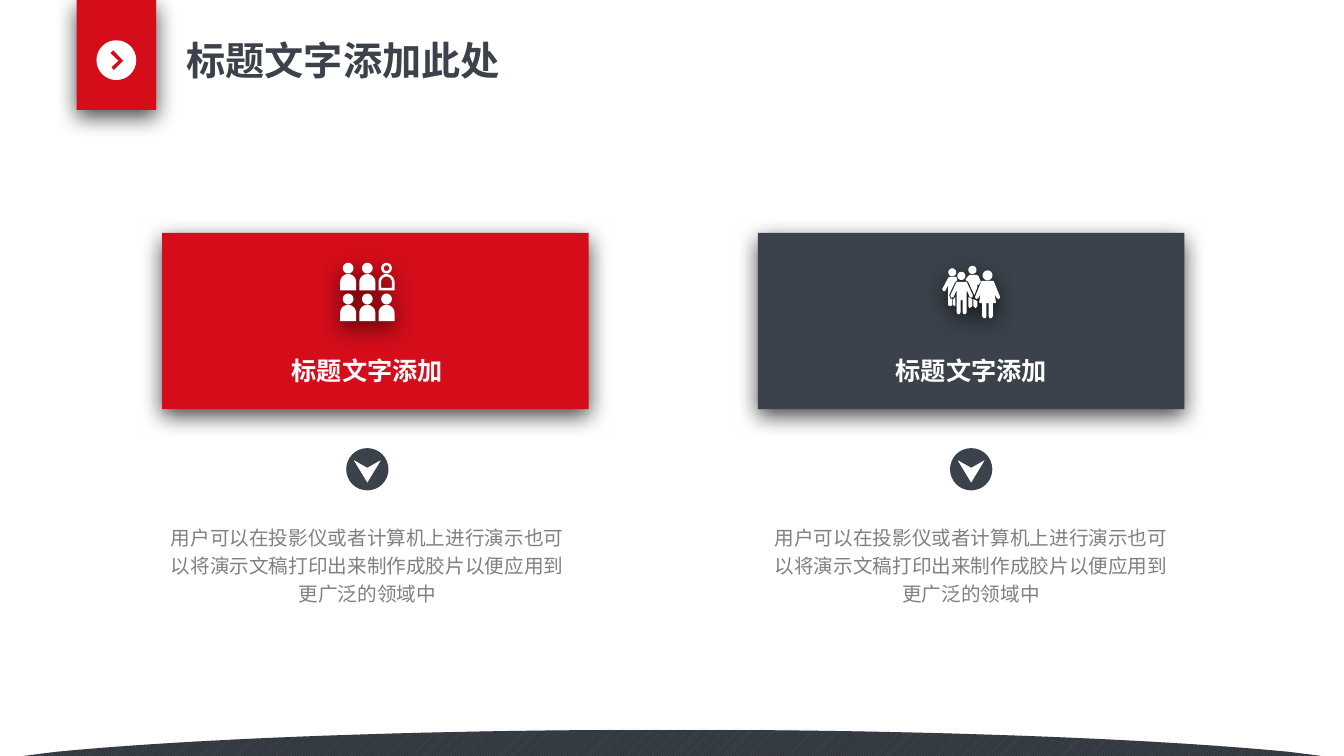
from math import cos, pi, sin

from lxml.etree import SubElement
from pptx import Presentation
from pptx.dml.color import RGBColor
from pptx.enum.dml import MSO_PATTERN
from pptx.enum.shapes import MSO_SHAPE as SHAPE
from pptx.enum.text import MSO_ANCHOR as ANCHOR, MSO_AUTO_SIZE as AUTO, PP_ALIGN as ALIGN
from pptx.oxml.ns import qn
from pptx.util import Pt

COLOURS = {"red": "D50D1B", "slate": "3B424B", "white": "FFFFFF",
           "grey": "808080", "stripe": "181818", "black": "000000"}
HEADING = "标题文字添加此处"
LABEL = "标题文字添加"
BODY = "用户可以在投影仪或者计算机上进行演示也可以将演示文稿打印出来制作成胶片以便应用到更广泛的领域中"

FRONT_LEFT = [(3.6, 11.5), (8, 21), (7.6, 22.7), (5.8, 22.5), (3.6, 17.3),
              (3.6, 33.1), (2.9, 34.5), (1.4, 34.5), (0.7, 33.1), (0.7, 24.5)]
FRONT_RIGHT = [(4.3, 10.8), (9, 22.3), (8.2, 23.8), (6.6, 23), (5, 20.2), (6, 26),
               (5.5, 26.6), (3.8, 26.6), (3.8, 36), (2.9, 37.4), (1.4, 37.4),
               (0.8, 36), (0.8, 26.6)]
BACK_PARTS = [
    [(5, 7.9), (10.1, 7.9), (10.8, 10.1), (9.4, 11.5), (6.5, 17.3), (5, 20.9),
     (5.8, 23.3), (7.2, 23.8), (7.2, 28.1), (5.8, 28.8), (4.3, 28.1), (4.3, 13.7),
     (2.2, 18), (0.7, 18), (0, 16.6), (4.3, 8.6)],
    [(19.4, 6.5), (24.5, 6.5), (25.9, 7.2), (27.4, 10.8), (27.4, 11.5), (25.9, 13.7),
     (25.2, 13), (25.2, 15.1), (23, 20.9), (20.9, 16.6), (18.7, 11.5), (16.6, 10.1),
     (18, 7.9)],
    [(22.3, 23.8), (25.2, 25.2), (25.2, 28.8), (23.8, 30.2), (22.3, 28.8)],
    [(18.7, 22.3), (21.6, 23.8), (21.6, 28.8), (19.4, 30.2), (18.7, 28.8)],
    [(7.9, 23.8), (9.4, 22.3), (9.4, 28.8), (7.9, 28.1)],
]
HEADS = [(13.7, 7.2, 2.9), (32.4, 6.8, 3.5), (7.2, 4.6, 2.8), (21.6, 2.9, 2.9)]


def rgb(name):
    """Return the named colour."""
    return RGBColor.from_string(COLOURS[name])


def style(shape, colour, shadow=False):
    """Fill a shape without outline, with a soft shadow below if asked."""
    shape.shadow.inherit = False
    shape.fill.solid()
    shape.fill.fore_color.rgb = rgb(colour)
    shape.line.fill.background()
    if shadow:
        effects = shape._element.spPr.find(qn("a:effectLst"))
        outer = SubElement(effects, qn("a:outerShdw"), blurRad=str(Pt(16)),
                           dist=str(Pt(5)), dir="5400000", algn="t", rotWithShape="0")
        tint = SubElement(outer, qn("a:srgbClr"), val=COLOURS["black"])
        SubElement(tint, qn("a:alpha"), val="71000")


def add_rect(s, x, y, w, h, colour):
    """Add a shadowed rectangle."""
    style(s.shapes.add_shape(SHAPE.RECTANGLE, Pt(x), Pt(y), Pt(w), Pt(h)), colour, True)


def add_outline(s, x, y, contours, colour, shadow=False):
    """Add one freeform made of closed contours, offset by x and y."""
    builder = None
    for contour in contours:
        pts = [(Pt(x + px), Pt(y + py)) for px, py in contour]
        if builder is None:
            builder = s.shapes.build_freeform(*pts[0])
        else:
            builder.move_to(*pts[0])
        builder.add_line_segments(pts[1:], close=True)
    shape = builder.convert_to_shape()
    style(shape, colour, shadow)
    return shape


def arc(cx, cy, radius, start=0, sweep=2 * pi, steps=32):
    """Return points along a circular arc."""
    angles = [start + sweep * i / steps for i in range(steps + 1)]
    return [(cx + radius * cos(a), cy + radius * sin(a)) for a in angles]


def mirror(half, axis):
    """Return a closed contour from its right half."""
    return [(axis + x, y) for x, y in half] + [(axis - x, y) for x, y in reversed(half)]


def bust(cx, top, inset=0):
    """Return the head and shoulders of one seated person."""
    bottom = top + 19.6 - inset
    radius = 5.7 - inset
    shoulders = arc(cx, top + 13.7, radius, pi, pi, 16)
    body = shoulders + [(cx + radius, bottom), (cx - radius, bottom)]
    return [arc(cx, top + 3.8, 3.8 - inset), body]


def seats():
    """Return the contours of six people in a grid, the third one hollow."""
    people = [bust(5.7 + 13.7 * col, 22 * row) for row in range(2) for col in range(3)]
    people.append(bust(33.1, 0, 1.8))
    return [contour for person in people for contour in person]


def crowd():
    """Return the contours of four standing people."""
    bodies = [mirror(FRONT_LEFT, 13.9), mirror(FRONT_RIGHT, 32.4)]
    return BACK_PARTS + bodies + [arc(*head) for head in HEADS]


def write(shape, text, size, font, colour, bold=False, align=ALIGN.CENTER, spacing=1.2):
    """Put one formatted paragraph into a shape."""
    tf = shape.text_frame
    tf.word_wrap = True
    tf.auto_size = AUTO.SHAPE_TO_FIT_TEXT
    tf.vertical_anchor = ANCHOR.TOP
    p = tf.paragraphs[0]
    p.alignment = align
    p.line_spacing = spacing
    r = p.add_run()
    r.text = text
    r.font.size = Pt(size)
    r.font.name = font
    r.font.bold = bold
    r.font.color.rgb = rgb(colour)


def add_footer(s, x, y, w, h):
    """Draw the striped arch along the bottom edge."""
    half = w / 2
    (x0, y0), (x1, y1), (x2, y2), (x3, y3) = (
        (-440.6, 15.8), (-344.8, 6.5), (-183.6, 0), (0, 0))
    curve = []
    for i in range(25):
        t = i / 24
        a, b, c, d = (1 - t) ** 3, 3 * t * (1 - t) ** 2, 3 * t * t * (1 - t), t ** 3
        curve.append((-(a * x0 + b * x1 + c * x2 + d * x3), a * y0 + b * y1 + c * y2 + d * y3))
    arch = add_outline(s, x, y, [mirror([(half, h)] + curve, half)], "slate")
    arch.fill.patterned()
    arch.fill.pattern = MSO_PATTERN.LIGHT_UPWARD_DIAGONAL
    arch.fill.fore_color.rgb = rgb("stripe")
    arch.fill.back_color.rgb = rgb("slate")


def add_header(s, x, y, w, h):
    """Place the red tab, its chevron badge and the title."""
    add_rect(s, x, y, w, h, "red")
    chevron = [(-2.2, -7.2), (-4.3, -5), (1.4, 0.4), (-3.6, 5), (-1.8, 7.2), (5, 0.4)]
    add_outline(s, x + w / 2, y + 43, [arc(0, 0, 14.2), chevron], "white")
    title = s.shapes.title
    title.left, title.top, title.width, title.height = (
        Pt(x + 71.3), Pt(y + 22.3), Pt(290.2), Pt(41))
    write(title, HEADING, 28, "Lato", "slate", True, ALIGN.LEFT, 1.0)


def add_column(s, x, y, w, card_x, colour, icon, icon_size):
    """Stack a card with icon and label, an arrow badge and the body text."""
    axis = x + w / 2
    add_rect(s, card_x, y, 304.6, 126, colour)
    icon_w, icon_h = icon_size
    add_outline(s, axis - icon_w / 2, y + 42.3 - icon_h / 2, icon, "white", True)
    label = s.shapes.add_textbox(Pt(axis - 88.2), Pt(y + 79.9), Pt(176.4), Pt(31))
    write(label, LABEL, 18, "Arial", "white", True)
    arrow = [(10, -6.8), (0, 9.7), (-10, -6.8), (0, -1.1)]
    add_outline(s, axis, y + 168.9, [arc(0, 0, 15.1), arrow], "slate")
    body = s.shapes.add_textbox(Pt(x), Pt(y + 202.3), Pt(w), Pt(68.4))
    write(body, BODY, 14, "Arial", "grey")


def main():
    """Build the slide and save it."""
    prs = Presentation()
    prs.slide_width, prs.slide_height = Pt(960), Pt(540)
    s = prs.slides.add_slide(prs.slide_layouts[5])
    add_footer(s, 16.6, 521.3, 927.3, 18.7)
    add_header(s, 54.7, 0, 56.9, 78.5)
    add_column(s, 112.3, 166.3, 300.2, 115.9, "red", seats(), (38.8, 41.6))
    add_column(s, 543.6, 166.3, 300.2, 541.4, "slate", crowd(), (41.4, 37.4))
    prs.save("out.pptx")


if __name__ == "__main__":
    main()
